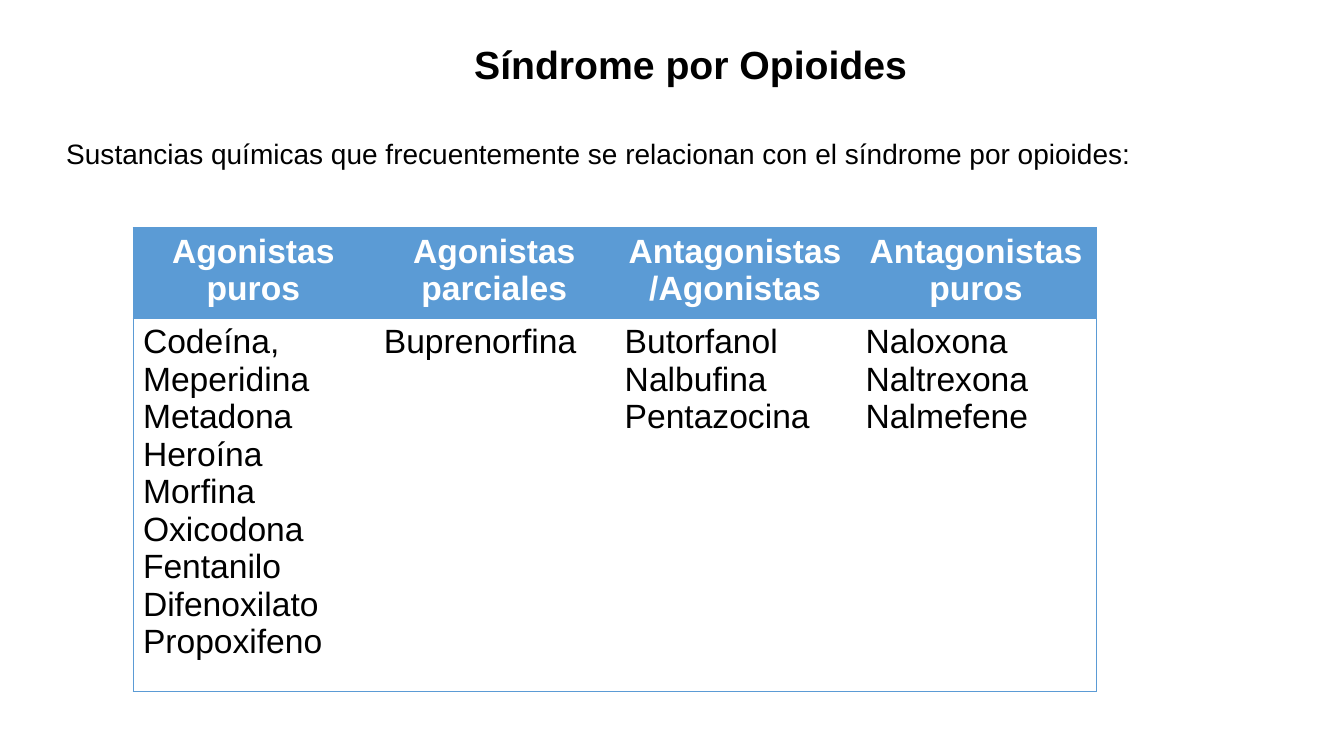
from lxml.etree import SubElement
from pptx import Presentation
from pptx.dml.color import RGBColor
from pptx.enum.text import MSO_ANCHOR, PP_ALIGN
from pptx.oxml.ns import qn
from pptx.util import Cm, Pt

BLACK, WHITE, BLUE = "000000", "FFFFFF", "5B9BD5"

GROUPS = [
    ("Agonistas puros", ["Codeína, Meperidina Metadona",
                         "Heroína Morfina Oxicodona",
                         "Fentanilo Difenoxilato", "Propoxifeno"]),
    ("Agonistas parciales", ["Buprenorfina"]),
    ("Antagonistas/Agonistas", ["Butorfanol Nalbufina Pentazocina"]),
    ("Antagonistas puros", ["Naloxona Naltrexona Nalmefene"]),
]


def color(code):
    return RGBColor.from_string(code)


class Page:
    """Style and current slide."""
    face = "Arial"

    def __init__(self, slide):
        self.slide = slide

    def add_lines(self, frame, lines, size, ink=BLACK, bold=False,
                  align=PP_ALIGN.LEFT):
        for num, line in enumerate(lines):
            para = frame.add_paragraph() if num else frame.paragraphs[0]
            para.alignment = align
            run = para.add_run()
            run.text = line
            font = run.font
            font.name, font.size, font.bold = self.face, Pt(size), bold
            font.color.rgb = color(ink)

    def text(self, left, top, width, height, line, size, **style):
        box = self.slide.shapes.add_textbox(
            Cm(left), Cm(top), Cm(width), Cm(height))
        frame = box.text_frame
        frame.word_wrap = True
        frame.vertical_anchor = MSO_ANCHOR.MIDDLE
        self.add_lines(frame, [line], size, **style)

    def border(self, cell, sides):
        """Draw the named sides of a cell and clear the others."""
        props = cell._tc.get_or_add_tcPr()
        for side in "LRTB":
            line = SubElement(props, qn(f"a:ln{side}"), w=str(Pt(0.5)))
            if side in sides:
                fill = SubElement(line, qn("a:solidFill"))
                SubElement(fill, qn("a:srgbClr"), val=BLUE)
            else:
                SubElement(line, qn("a:noFill"))

    def table(self, left, top, width, heights, groups):
        last = len(groups) - 1
        grid = self.slide.shapes.add_table(
            2, len(groups), Cm(left), Cm(top), Cm(width),
            Cm(sum(heights))).table
        grid.horz_banding = False
        for row, height in zip(grid.rows, heights):
            row.height = Cm(height)
        for col, (head, drugs) in enumerate(groups):
            edge = {0: "L", last: "R"}.get(col, "")
            cells = grid.cell(0, col), grid.cell(1, col)
            for cell, fill in zip(cells, (BLUE, WHITE)):
                self.border(cell, edge + "TB")
                cell.fill.solid()
                cell.fill.fore_color.rgb = color(fill)
            self.add_lines(cells[0].text_frame, [head], 24, WHITE, True,
                           PP_ALIGN.CENTER)
            self.add_lines(cells[1].text_frame, drugs, 24)


def main():
    deck = Presentation()
    deck.slide_width, deck.slide_height = Cm(33.87), Cm(19.05)
    page = Page(deck.slides.add_slide(deck.slide_layouts[6]))
    page.text(2.8, 0.53, 29.21, 2.16, "Síndrome por Opioides", 28,
              bold=True, align=PP_ALIGN.CENTER)
    page.table(3.35, 5.74, 24.28, (2.17, 8.72), GROUPS)
    page.text(1.42, 3.3, 29.34, 1.12,
              "Sustancias químicas que frecuentemente se relacionan "
              "con el síndrome por opioides:", 20)
    deck.save("out.pptx")


if __name__ == "__main__":
    main()
